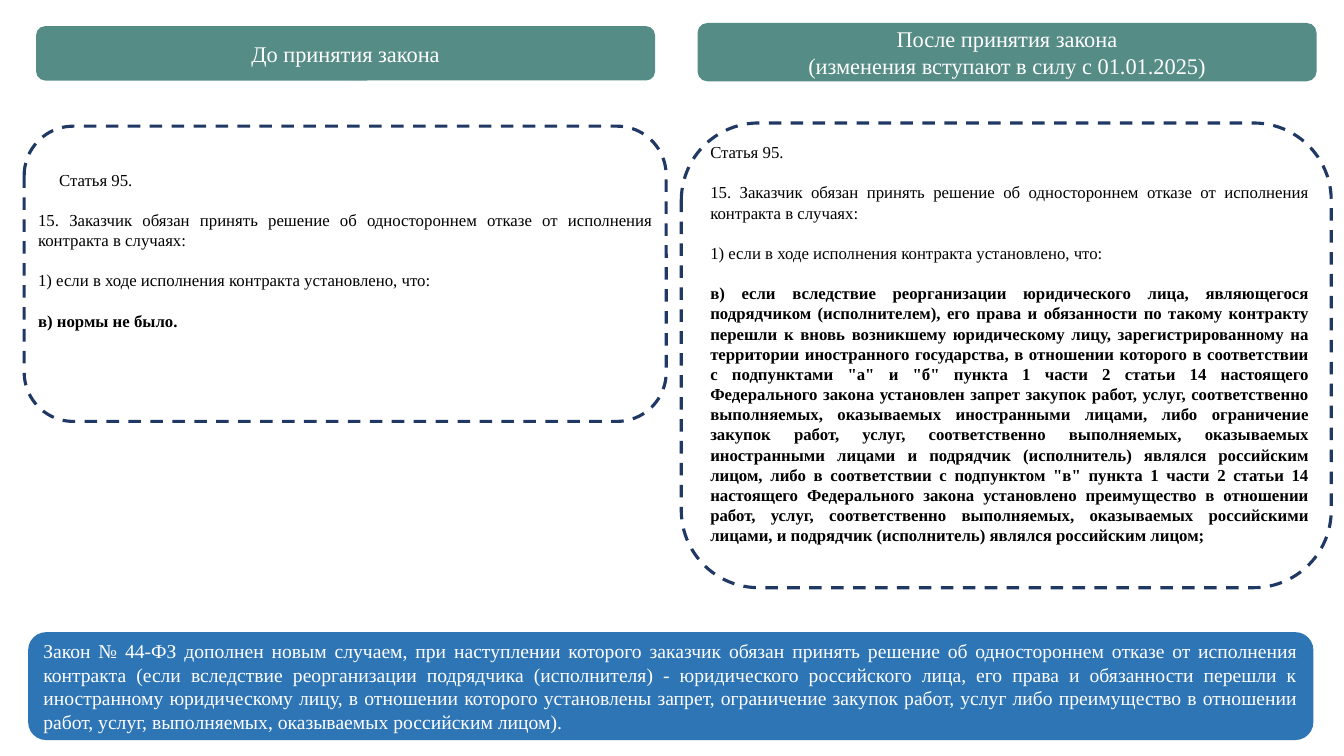
from pptx import Presentation
from pptx.dml.color import RGBColor
from pptx.enum.dml import MSO_LINE
from pptx.enum.shapes import MSO_SHAPE
from pptx.enum.text import MSO_ANCHOR, MSO_AUTO_SIZE, PP_ALIGN
from pptx.util import Cm, Pt

ROUND = MSO_SHAPE.ROUNDED_RECTANGLE
DASH = MSO_LINE.DASH
MIDDLE = MSO_ANCHOR.MIDDLE
FIT = MSO_AUTO_SIZE.SHAPE_TO_FIT_TEXT
CENTER, JUSTIFY = PP_ALIGN.CENTER, PP_ALIGN.JUSTIFY

FONT = "Times New Roman"
GREEN, BLUE, NAVY = "568C86", "2E75B6", "203864"
WHITE, BLACK = "FFFFFF", "000000"

ARTICLE = [
    "Статья 95.",
    "15. Заказчик обязан принять решение об одностороннем отказе от исполнения контракта в случаях:",
    "1) если в ходе исполнения контракта установлено, что:",
]
NEW_RULE = [
    "в) если вследствие реорганизации юридического лица, являющегося подрядчиком (исполнителем),",
    "его права и обязанности по такому контракту перешли к вновь возникшему юридическому лицу,",
    "зарегистрированному на территории иностранного государства, в отношении которого в соответствии",
    "с подпунктами \"а\" и \"б\" пункта 1 части 2 статьи 14 настоящего Федерального закона установлен",
    "запрет закупок работ, услуг, соответственно выполняемых, оказываемых иностранными лицами, либо",
    "ограничение закупок работ, услуг, соответственно выполняемых, оказываемых иностранными лицами",
    "и подрядчик (исполнитель) являлся российским лицом, либо в соответствии с подпунктом \"в\"",
    "пункта 1 части 2 статьи 14 настоящего Федерального закона установлено преимущество в отношении",
    "работ, услуг, соответственно выполняемых, оказываемых российскими лицами, и подрядчик",
    "(исполнитель) являлся российским лицом;",
]
SUMMARY = (
    "Закон № 44-ФЗ дополнен новым случаем, при наступлении которого заказчик обязан принять решение "
    "об одностороннем отказе от исполнения контракта (если вследствие реорганизации подрядчика "
    "(исполнителя) - юридического российского лица, его права и обязанности перешли к иностранному "
    "юридическому лицу, в отношении которого установлены запрет, ограничение закупок работ, услуг "
    "либо преимущество в отношении работ, услуг, выполняемых, оказываемых российским лицом)."
)

BANNERS = [
    ((0.91, 0.66, 15.6, 1.37), GREEN, 16, CENTER, ["До принятия закона"]),
    ((17.58, 0.58, 15.6, 1.47), GREEN, 16, CENTER,
     ["После принятия закона", "(изменения вступают в силу с 01.01.2025)"]),
    ((0.71, 15.93, 32.39, 2.72), BLUE, 14, JUSTIFY, [SUMMARY]),
]
FRAMES = [(0.61, 3.18, 16.18, 7.44), (17.17, 3.1, 16.38, 11.71)]
ARTICLES = [
    ((17.65, 3.45, 15.6, 11.02), 0, NEW_RULE),
    ((0.71, 4.14, 16, 5.38), 0.53, ["в) нормы не было."]),
]


def rgb(value):
    return RGBColor.from_string(value)


def lengths(box):
    return [Cm(v) for v in box]


def add_round(s, box):
    sp = s.shapes.add_shape(ROUND, *lengths(box))
    sp.shadow.inherit = False
    return sp


def write(tf, lines, size, color, align, gap=0):
    tf.word_wrap = True
    tf.text = "\n".join(lines)
    for i, p in enumerate(tf.paragraphs):
        p.alignment = align
        p.space_before = Pt(gap if i else 0)
        for r in p.runs:
            r.font.name = FONT
            r.font.size = Pt(size)
            r.font.color.rgb = rgb(color)


def add_banner(s, box, fill, size, align, lines):
    sp = add_round(s, box)
    sp.fill.solid()
    sp.fill.fore_color.rgb = rgb(fill)
    sp.line.fill.background()
    sp.text_frame.vertical_anchor = MIDDLE
    write(sp.text_frame, lines, size, WHITE, align)


def add_frame(s, box):
    sp = add_round(s, box)
    sp.fill.background()
    sp.line.color.rgb = rgb(NAVY)
    sp.line.width = Pt(2.25)
    sp.line.dash_style = DASH


def add_article(s, box, indent, rule):
    tf = s.shapes.add_textbox(*lengths(box)).text_frame
    write(tf, ARTICLE + [" ".join(rule)], 12, BLACK, JUSTIFY, gap=14.4)
    tf.auto_size = FIT
    if indent:
        tf.paragraphs[0]._p.get_or_add_pPr().set("indent", str(Cm(indent)))
    tf.paragraphs[-1].runs[0].font.bold = True


def main():
    prs = Presentation()
    prs.slide_width, prs.slide_height = Cm(33.87), Cm(19.05)
    s = prs.slides.add_slide(prs.slide_layouts[6])
    for banner in BANNERS:
        add_banner(s, *banner)
    for box in FRAMES:
        add_frame(s, box)
    for article in ARTICLES:
        add_article(s, *article)
    prs.save("out.pptx")


if __name__ == "__main__":
    main()
